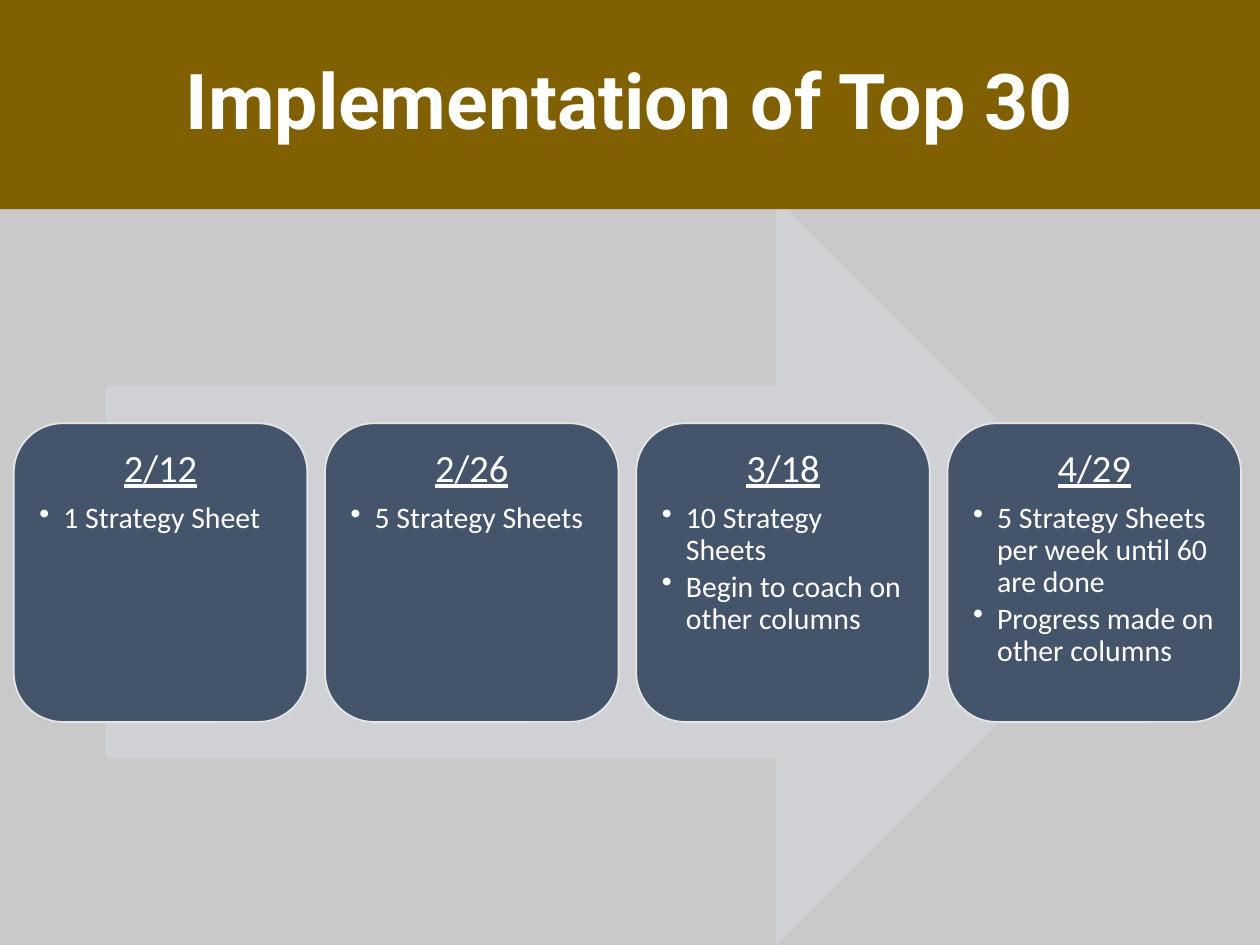
from pptx import Presentation
from pptx.dml.color import RGBColor
from pptx.enum.shapes import MSO_SHAPE
from pptx.enum.text import MSO_ANCHOR, PP_ALIGN
from pptx.oxml.ns import qn
from pptx.util import Inches, Pt
from lxml import etree

RECT, ROUND, ARROW = MSO_SHAPE.RECTANGLE, MSO_SHAPE.ROUNDED_RECTANGLE, MSO_SHAPE.RIGHT_ARROW
TOP, MIDDLE = MSO_ANCHOR.TOP, MSO_ANCHOR.MIDDLE
LEFT, CENTER = PP_ALIGN.LEFT, PP_ALIGN.CENTER

COLORS = {"bg": "C9C9C9", "banner": "806000", "arrow": "CFD1D4",
          "card": "44546A", "edge": "E7E6E6", "text": "FFFFFF"}
W, H = 10, 7.5
BANNER = (0, 0, W, 1.66)
ARROW_BOX = (0.84, 1.58, 8.28, 5.92)
CARDS_BOX = (0.11, 3.36, 9.74, 2.37)
CARD_W = 2.33
INDENT = 0.19

TITLE_FONT = {"name": "Roboto", "size": Pt(44), "bold": True}
DATE_FONT = {"name": "Calibri", "size": Pt(22), "underline": True}
ITEM_FONT = {"name": "Calibri", "size": Pt(17)}

STEPS = [
    ("2/12", ["1 Strategy Sheet"]),
    ("2/26", ["5 Strategy Sheets"]),
    ("3/18", ["10 Strategy Sheets", "Begin to coach on other columns"]),
    ("4/29", ["5 Strategy Sheets per week until 60 are done",
              "Progress made on other columns"]),
]


def rgb(key):
    return RGBColor.from_string(COLORS[key])


def add_block(s, kind, box, fill, line=None):
    sp = s.shapes.add_shape(kind, *map(Inches, box))
    sp.shadow.inherit = False
    sp.fill.solid()
    sp.fill.fore_color.rgb = rgb(fill)
    if line:
        sp.line.color.rgb = rgb(line)
        sp.line.width = Pt(1)
    else:
        sp.line.fill.background()
    return sp


def write(p, text, font, align, after=0):
    p.alignment = align
    p.line_spacing = 0.9
    p.space_after = Pt(after)
    r = p.add_run()
    r.text = text
    for name, value in font.items():
        setattr(r.font, name, value)
    r.font.color.rgb = rgb("text")


def add_bullet(p):
    pPr = p._p.get_or_add_pPr()
    pPr.set("marL", str(Inches(INDENT)))
    pPr.set("indent", str(-Inches(INDENT)))
    etree.SubElement(pPr, qn("a:buChar")).set("char", "•")


def add_banner(s, box, title):
    tf = add_block(s, RECT, box, "banner").text_frame
    tf.word_wrap = True
    tf.vertical_anchor = MIDDLE
    write(tf.paragraphs[0], title, TITLE_FONT, CENTER)


def add_card(s, box, date, items):
    tf = add_block(s, ROUND, box, "card", "edge").text_frame
    tf.word_wrap = True
    tf.vertical_anchor = TOP
    for side in ("left", "top", "right", "bottom"):
        setattr(tf, f"margin_{side}", Inches(0.09))
    write(tf.paragraphs[0], date, DATE_FONT, CENTER, after=7)
    for item in items:
        p = tf.add_paragraph()
        p.level = 1
        add_bullet(p)
        write(p, item, ITEM_FONT, LEFT, after=2.5)


def add_timeline(s, box, steps):
    """Spread the cards evenly from the left to the right edge of the box."""
    x, y, w, h = box
    pitch = (w - CARD_W) / (len(steps) - 1)
    for i, (date, items) in enumerate(steps):
        add_card(s, (x + i * pitch, y, CARD_W, h), date, items)


def main():
    prs = Presentation()
    prs.slide_width, prs.slide_height = Inches(W), Inches(H)
    s = prs.slides.add_slide(prs.slide_layouts[6])
    s.background.fill.solid()
    s.background.fill.fore_color.rgb = rgb("bg")
    add_block(s, ARROW, ARROW_BOX, "arrow")
    add_timeline(s, CARDS_BOX, STEPS)
    add_banner(s, BANNER, "Implementation of Top 30")
    prs.save("out.pptx")


if __name__ == "__main__":
    main()
